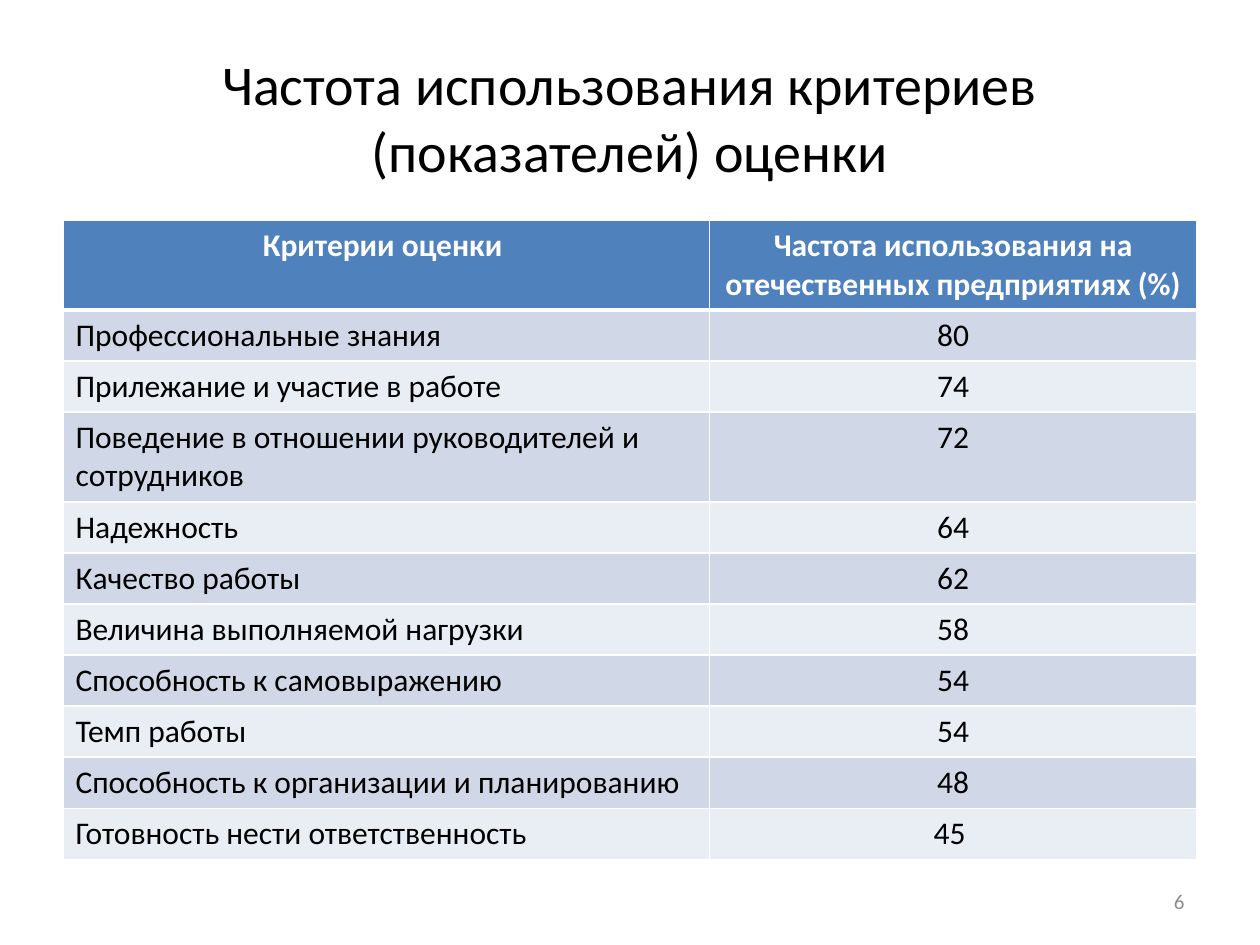
"""Build a slide with a table of how often staff appraisal criteria are used."""
import pptx
import pptx.dml.color
import pptx.enum.text
import pptx.oxml
import pptx.oxml.ns
import pptx.util

Pt = pptx.util.Pt
ALIGN = pptx.enum.text.PP_ALIGN
MIDDLE = pptx.enum.text.MSO_ANCHOR.MIDDLE

TITLE = "Частота использования критериев (показателей) оценки"
PAGE_NUMBER = "6"
HEADER = ("Критерии оценки ", "Частота использования на отечественных предприятиях (%) ")
CRITERIA = [
    ("Профессиональные знания", "80"),
    ("Прилежание и участие в работе", "74"),
    ("Поведение в отношении руководителей и сотрудников", "72"),
    ("Надежность", "64"),
    ("Качество работы", "62"),
    ("Величина выполняемой нагрузки", "58"),
    ("Способность к самовыражению", "54"),
    ("Темп работы", "54"),
    ("Способность к организации и планированию", "48"),
    ("Готовность нести ответственность", "45 "),
]
COLORS = {
    "text": "000000",
    "header": "4F81BD",
    "header_text": "FFFFFF",
    "odd": "D0D8E8",
    "even": "E9EDF4",
    "border": "FFFFFF",
    "page_number": "8C8C8C",
}
COLUMN_WIDTHS = (369.4, 278.6)
ROW_HEIGHT = 29.2
LEFT, TABLE_TOP = 36, 126


def rgb(name):
    return pptx.dml.color.RGBColor.from_string(COLORS[name])


def write(frame, text, align, size, color, bold=False):
    paragraph = frame.paragraphs[0]
    paragraph.alignment = align
    run = paragraph.add_run()
    run.text = text
    for attribute, value in {"name": "Calibri", "size": Pt(size), "bold": bold}.items():
        setattr(run.font, attribute, value)
    run.font.color.rgb = rgb(color)


def place(shape, left, top, width, height):
    box = {"left": left, "top": top, "width": width, "height": height}
    for attribute, value in box.items():
        setattr(shape, attribute, Pt(value))


def add_borders(cell, widths):
    properties = cell._tc.get_or_add_tcPr()
    for side, width in widths.items():
        properties.append(pptx.oxml.parse_xml(
            f'<a:ln{side} {pptx.oxml.ns.nsdecls("a")} w="{Pt(width)}"><a:solidFill>'
            f'<a:srgbClr val="{COLORS["border"]}"/></a:solidFill></a:ln{side}>'))


def fill_table(table):
    for column, width in zip(table.columns, COLUMN_WIDTHS):
        column.width = Pt(width)
    for r, texts in enumerate([HEADER, *CRITERIA]):
        table.rows[r].height = Pt(ROW_HEIGHT)
        is_header = r == 0
        fill = "header" if is_header else ("even", "odd")[r % 2]
        borders = {"L": 1, "R": 1, "T": 3 if r == 1 else 1, "B": 3 if is_header else 1}
        for c, text in enumerate(texts):
            cell = table.cell(r, c)
            add_borders(cell, borders)
            cell.fill.solid()
            cell.fill.fore_color.rgb = rgb(fill)
            align = ALIGN.CENTER if is_header or c == 1 else ALIGN.LEFT
            write(cell.text_frame, text, align, 18,
                  "header_text" if is_header else "text", is_header)


def main():
    presentation = pptx.Presentation()
    presentation.slide_width, presentation.slide_height = Pt(720), Pt(540)
    slide = presentation.slides.add_slide(presentation.slide_layouts[5])

    title = slide.shapes.title
    place(title, LEFT, 21.6, 648, 90)
    title.text_frame.vertical_anchor = MIDDLE
    write(title.text_frame, TITLE, ALIGN.CENTER, 32, "text")

    row_count = len(CRITERIA) + 1
    criteria_table = slide.shapes.add_table(
        row_count, len(HEADER), Pt(LEFT), Pt(TABLE_TOP),
        Pt(sum(COLUMN_WIDTHS)), Pt(ROW_HEIGHT * row_count))
    fill_table(criteria_table.table)

    page_number = slide.shapes.add_textbox(Pt(516), Pt(500.5), Pt(168), Pt(28.8))
    page_number.text_frame.word_wrap = True
    page_number.text_frame.vertical_anchor = MIDDLE
    write(page_number.text_frame, PAGE_NUMBER, ALIGN.RIGHT, 12, "page_number")

    presentation.save("out.pptx")


if __name__ == "__main__":
    main()
